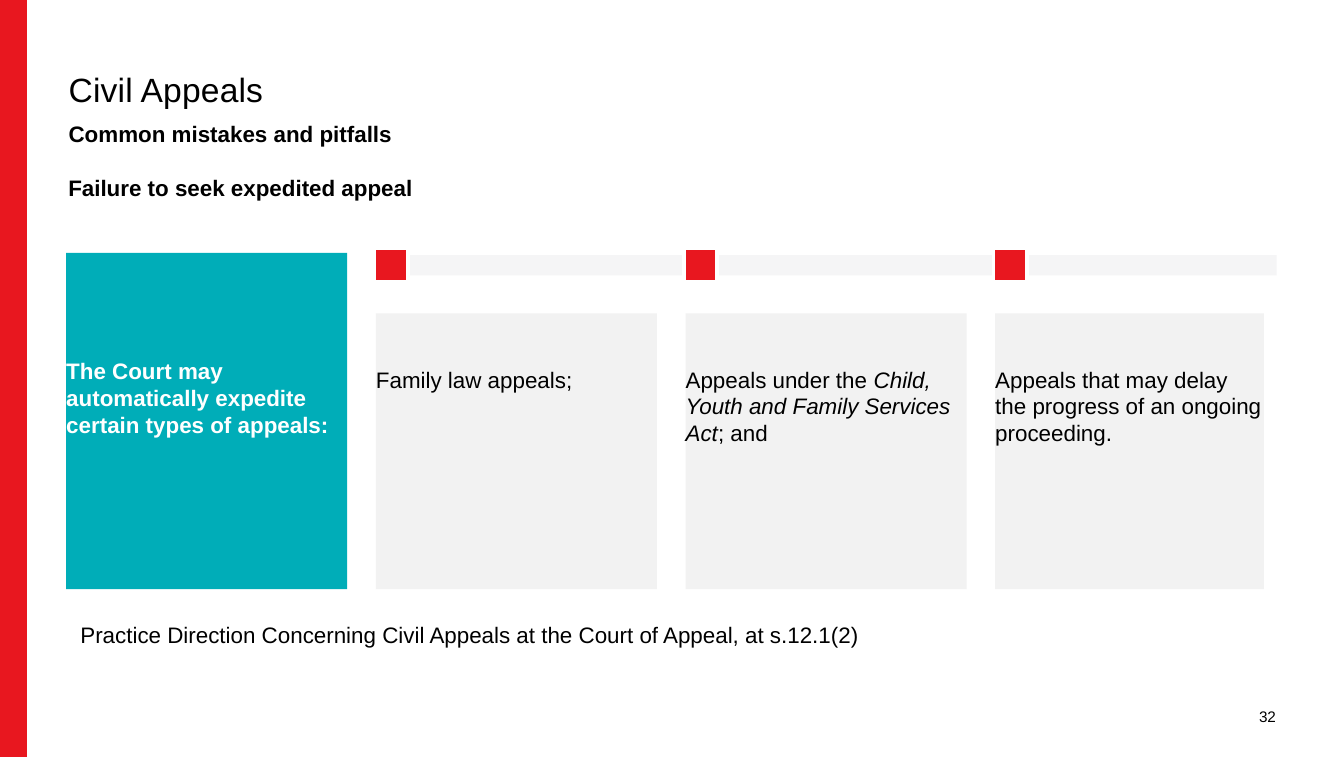
from dataclasses import dataclass

from pptx import Presentation
from pptx.dml.color import RGBColor
from pptx.enum import shapes, text
from pptx.util import Pt

RED = RGBColor(0xE8, 0x17, 0x1F)
TEAL = RGBColor(0x00, 0xAD, 0xB8)
TRACK_GREY = RGBColor(0xF5, 0xF5, 0xF6)
CARD_GREY = RGBColor(0xF2, 0xF2, 0xF2)
WHITE = RGBColor(0xFF, 0xFF, 0xFF)
BLACK = RGBColor(0x00, 0x00, 0x00)

FONT = "Arial"
SLIDE_WIDTH = 720
SLIDE_HEIGHT = 405.4
COLUMN_LEFT = 35.5
COLUMN_PITCH = 165.9
CARD_BOTTOM = 315.5
MARKER_SIZE = 18


@dataclass(frozen=True)
class Box:
    left: float
    top: float
    width: float
    height: float

    def lengths(self) -> tuple:
        return Pt(self.left), Pt(self.top), Pt(self.width), Pt(self.height)


@dataclass(frozen=True)
class Style:
    size: float = 12
    color: RGBColor = BLACK
    bold: bool = False
    tracking: int = 0
    align: text.PP_ALIGN = text.PP_ALIGN.LEFT
    anchor: text.MSO_ANCHOR = text.MSO_ANCHOR.TOP


@dataclass(frozen=True)
class Label:
    box: Box
    wording: str
    style: Style
    inset_left: float = 0
    inset_top: float = 0


@dataclass(frozen=True)
class Card:
    top: float
    width: float
    fill: RGBColor
    inset_top: float
    style: Style
    runs: tuple[str, ...]
    italic_run: int = -1


CARDS = [
    Card(135.4, 150.5, TEAL, 56, Style(color=WHITE, bold=True),
         ("The Court may automatically expedite certain types of appeals:",)),
    Card(167.8, 150.5, CARD_GREY, 28, Style(), ("Family law appeals;",)),
    Card(167.8, 150.5, CARD_GREY, 28, Style(),
         ("Appeals under the ", "Child, Youth and Family Services Act", "; and"), 1),
    Card(167.8, 144, CARD_GREY, 28, Style(),
         ("Appeals that may delay the progress of an ongoing proceeding.",)),
]

LABELS = [
    Label(Box(36, 36, 648, 23), "Civil Appeals", Style(size=18, tracking=10), 0.8, 0.8),
    Label(Box(36, 64.2, 648, 16.5), "Common mistakes and pitfalls", Style(bold=True), 0.8),
    Label(Box(29.5, 89.9, 405, 21.6), "Failure to seek expedited appeal",
          Style(bold=True), 7.2, 3.6),
    Label(Box(36, 329, 648, 21.6),
          "Practice Direction Concerning Civil Appeals at the Court of Appeal, at s.12.1(2)",
          Style(), 7.2, 3.6),
    Label(Box(643, 362.2, 40.5, 43), "32",
          Style(size=8.2, align=text.PP_ALIGN.RIGHT, anchor=text.MSO_ANCHOR.MIDDLE)),
]


def column_left(column: int) -> float:
    return COLUMN_LEFT + column * COLUMN_PITCH


def add_rectangle(slide, box: Box, fill: RGBColor):
    shape = slide.shapes.add_shape(shapes.MSO_SHAPE.RECTANGLE, *box.lengths())
    shape.shadow.inherit = False
    shape.fill.solid()
    shape.fill.fore_color.rgb = fill
    shape.line.fill.background()
    return shape


def format_text(shape, style: Style, inset_left: float, inset_top: float) -> None:
    frame = shape.text_frame
    frame.word_wrap = True
    frame.vertical_anchor = style.anchor
    frame.margin_left, frame.margin_top = Pt(inset_left), Pt(inset_top)
    frame.margin_right = frame.margin_bottom = Pt(0)
    paragraph = frame.paragraphs[0]
    paragraph.alignment = style.align
    for run in paragraph.runs:
        run.font.name = FONT
        run.font.size = Pt(style.size)
        run.font.bold = style.bold
        run.font.color.rgb = style.color
        if style.tracking:
            run._r.get_or_add_rPr().set("spc", str(style.tracking))


def add_label(slide, label: Label) -> None:
    shape = slide.shapes.add_textbox(*label.box.lengths())
    shape.text_frame.text = label.wording
    format_text(shape, label.style, label.inset_left, label.inset_top)


def add_marker(slide, column: int) -> None:
    box = Box(column_left(column) - 1, 132.9, MARKER_SIZE, MARKER_SIZE)
    shape = add_rectangle(slide, box, RED)
    shape.line.color.rgb = WHITE
    shape.line.width = Pt(2)


def add_card(slide, card: Card, column: int) -> None:
    box = Box(column_left(column), card.top, card.width, CARD_BOTTOM - card.top)
    shape = add_rectangle(slide, box, card.fill)
    paragraph = shape.text_frame.paragraphs[0]
    for index, wording in enumerate(card.runs):
        run = paragraph.add_run()
        run.text = wording
        run.font.italic = index == card.italic_run
    format_text(shape, card.style, 0, card.inset_top)


def main() -> None:
    presentation = Presentation()
    presentation.slide_width, presentation.slide_height = Pt(SLIDE_WIDTH), Pt(SLIDE_HEIGHT)
    slide = presentation.slides.add_slide(presentation.slide_layouts[6])

    add_rectangle(slide, Box(0, 0, 14.4, SLIDE_HEIGHT), RED)
    add_rectangle(slide, Box(column_left(1), 136.7, 482.5, 10.8), TRACK_GREY)
    for column in range(1, len(CARDS)):
        add_marker(slide, column)
    for column, card in enumerate(CARDS):
        add_card(slide, card, column)
    for label in LABELS:
        add_label(slide, label)

    presentation.save("out.pptx")


if __name__ == "__main__":
    main()
